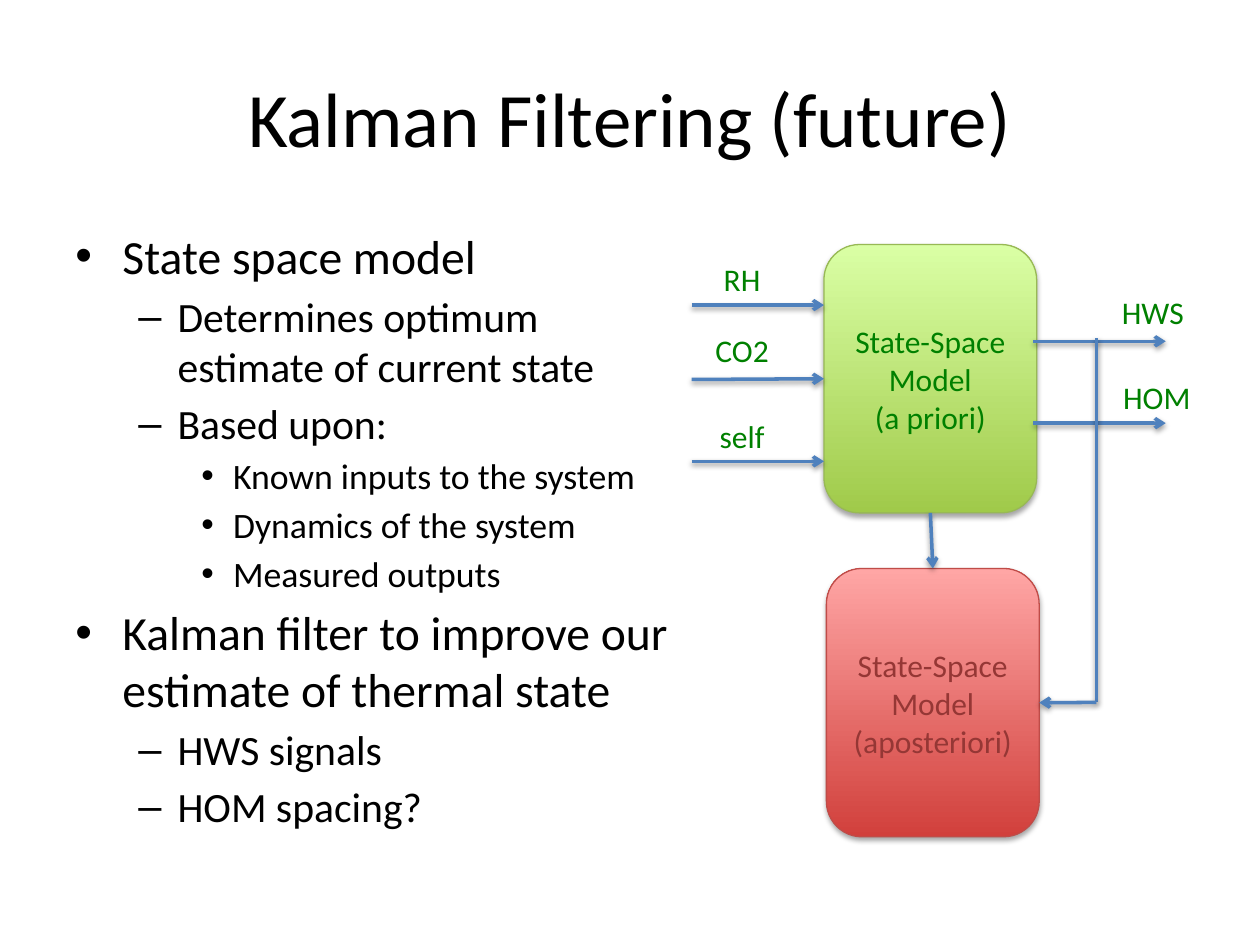
from lxml.etree import SubElement
from pptx import Presentation
from pptx.dml.color import RGBColor
from pptx.enum.shapes import MSO_CONNECTOR, MSO_SHAPE
from pptx.enum.text import MSO_ANCHOR, PP_ALIGN
from pptx.oxml.ns import qn
from pptx.util import Cm, Pt

COLORS = {
    "black": "000000", "green": "008000", "red": "953735", "arrow": "4F81BD",
    "prior_dark": "A0CA4A", "prior_light": "DAFFA5", "prior_line": "98B955",
    "post_dark": "D1403C", "post_light": "FFA6A5", "post_line": "BF4C48",
}


def format_text(paragraph, size, color):
    for run in paragraph.runs:
        run.font.name = "Calibri"
        run.font.size = Pt(size)
        run.font.color.rgb = RGBColor.from_string(COLORS[color])


def add_shadow(properties, distance, opacity):
    effects = properties.find(qn("a:effectLst"))
    if effects is None:
        effects = SubElement(properties, qn("a:effectLst"))
    shadow = SubElement(effects, qn("a:outerShdw"), blurRad=str(Pt(3.1)),
                        dist=str(Pt(distance)), dir="5400000", rotWithShape="0")
    color = SubElement(shadow, qn("a:srgbClr"), val=COLORS["black"])
    SubElement(color, qn("a:alpha"), val=str(opacity * 1000))


presentation = Presentation()
presentation.slide_width, presentation.slide_height = Cm(25.4), Cm(19.05)
slide = presentation.slides.add_slide(presentation.slide_layouts[5])
shapes = slide.shapes

title = shapes.title
title.left, title.top, title.width, title.height = Cm(1.27), Cm(0.76), Cm(22.86), Cm(3.18)
title.text_frame.text = "Kalman Filtering (future)"
title.text_frame.vertical_anchor = MSO_ANCHOR.MIDDLE
title.text_frame.paragraphs[0].alignment = PP_ALIGN.CENTER
format_text(title.text_frame.paragraphs[0], 44, "black")

levels = [(27.2, "•", 0.95, 0.95), (23.8, "–", 2.06, 0.79), (20.4, "•", 3.18, 0.64)]
outline = [
    (0, "State space model"),
    (1, "Determines optimum estimate of current state"),
    (1, "Based upon:"),
    (2, "Known inputs to the system"),
    (2, "Dynamics of the system"),
    (2, "Measured outputs"),
    (0, "Kalman filter to improve our estimate of thermal state"),
    (1, "HWS signals"),
    (1, "HOM spacing?"),
]
body = shapes.add_textbox(Cm(1.27), Cm(4.45), Cm(12.88), Cm(12.57))
body.text_frame.word_wrap = True
body.text_frame.text = "\n".join(text for _, text in outline)
for paragraph, (level, _) in zip(body.text_frame.paragraphs, outline):
    size, bullet, margin, hanging = levels[level]
    paragraph.level = level
    paragraph.space_before = Pt(round(size * 0.17, 1))
    format_text(paragraph, size, "black")
    properties = paragraph._p.get_or_add_pPr()
    properties.set("marL", str(Cm(margin)))
    properties.set("indent", str(-Cm(hanging)))
    SubElement(properties, qn("a:buFont"), typeface="Arial")
    SubElement(properties, qn("a:buChar"), char=bullet)

models = {}
for name, left, top, note, text_color in [
    ("prior", 16.61, 4.93, "(a priori)", "green"),
    ("post", 16.66, 11.46, "(aposteriori)", "red"),
]:
    model = shapes.add_shape(MSO_SHAPE.ROUNDED_RECTANGLE, Cm(left), Cm(top), Cm(4.29), Cm(5.41))
    model.fill.gradient()
    model.fill.gradient_angle = 90
    for stop, shade in zip(model.fill.gradient_stops, ("dark", "light")):
        stop.color.rgb = RGBColor.from_string(COLORS[f"{name}_{shade}"])
    model.line.color.rgb = RGBColor.from_string(COLORS[f"{name}_line"])
    model.line.width = Pt(0.75)
    model.shadow.inherit = False
    add_shadow(model._element.spPr, 1.8, 35)
    model.text_frame.word_wrap = True
    model.text_frame.vertical_anchor = MSO_ANCHOR.MIDDLE
    model.text_frame.text = f"State-Space Model\n{note}"
    for paragraph in model.text_frame.paragraphs:
        paragraph.alignment = PP_ALIGN.CENTER
        format_text(paragraph, 18, text_color)
    models[name] = model

prior, post = models["prior"], models["post"]
input_start, input_end = 13.94, 16.61
output_start, output_end = 20.83, 23.5
feedback_x, feedback_y = 22.1, 14.16
connections = [
    (input_start, 6.15, input_end, 6.15, True, None, None),
    (input_start, 7.65, input_end, 7.65, True, None, (prior, 1)),
    (input_start, 9.3, input_end, 9.3, True, None, None),
    (output_start, 6.88, output_end, 6.88, True, None, None),
    (output_start, 8.53, output_end, 8.53, True, None, None),
    (feedback_x, feedback_y, feedback_x, 6.81, False, None, None),
    (feedback_x, feedback_y, 20.95, feedback_y, True, None, (post, 3)),
    (18.76, 10.34, 18.81, 11.46, True, (prior, 2), (post, 0)),
]
for x1, y1, x2, y2, has_arrow, source, target in connections:
    connector = shapes.add_connector(MSO_CONNECTOR.STRAIGHT, Cm(x1), Cm(y1), Cm(x2), Cm(y2))
    if source:
        connector.begin_connect(*source)
    if target:
        connector.end_connect(*target)
    connector.line.color.rgb = RGBColor.from_string(COLORS["arrow"])
    connector.line.width = Pt(2)
    if has_arrow:
        SubElement(connector.line._get_or_add_ln(), qn("a:tailEnd"), type="arrow")
    add_shadow(connector._element.spPr, 1.6, 38)

label_width = 1.9
for text, center, top in [
    ("RH", 14.96, 5.11), ("CO2", 14.96, 6.55), ("self", 14.96, 8.28),
    ("HWS", 23.24, 5.79), ("HOM", 23.32, 7.49),
]:
    label = shapes.add_textbox(Cm(center - label_width / 2), Cm(top), Cm(label_width), Cm(1.02))
    label.text_frame.word_wrap = False
    label.text_frame.text = text
    label.text_frame.paragraphs[0].alignment = PP_ALIGN.CENTER
    format_text(label.text_frame.paragraphs[0], 18, "green")

presentation.save("out.pptx")
